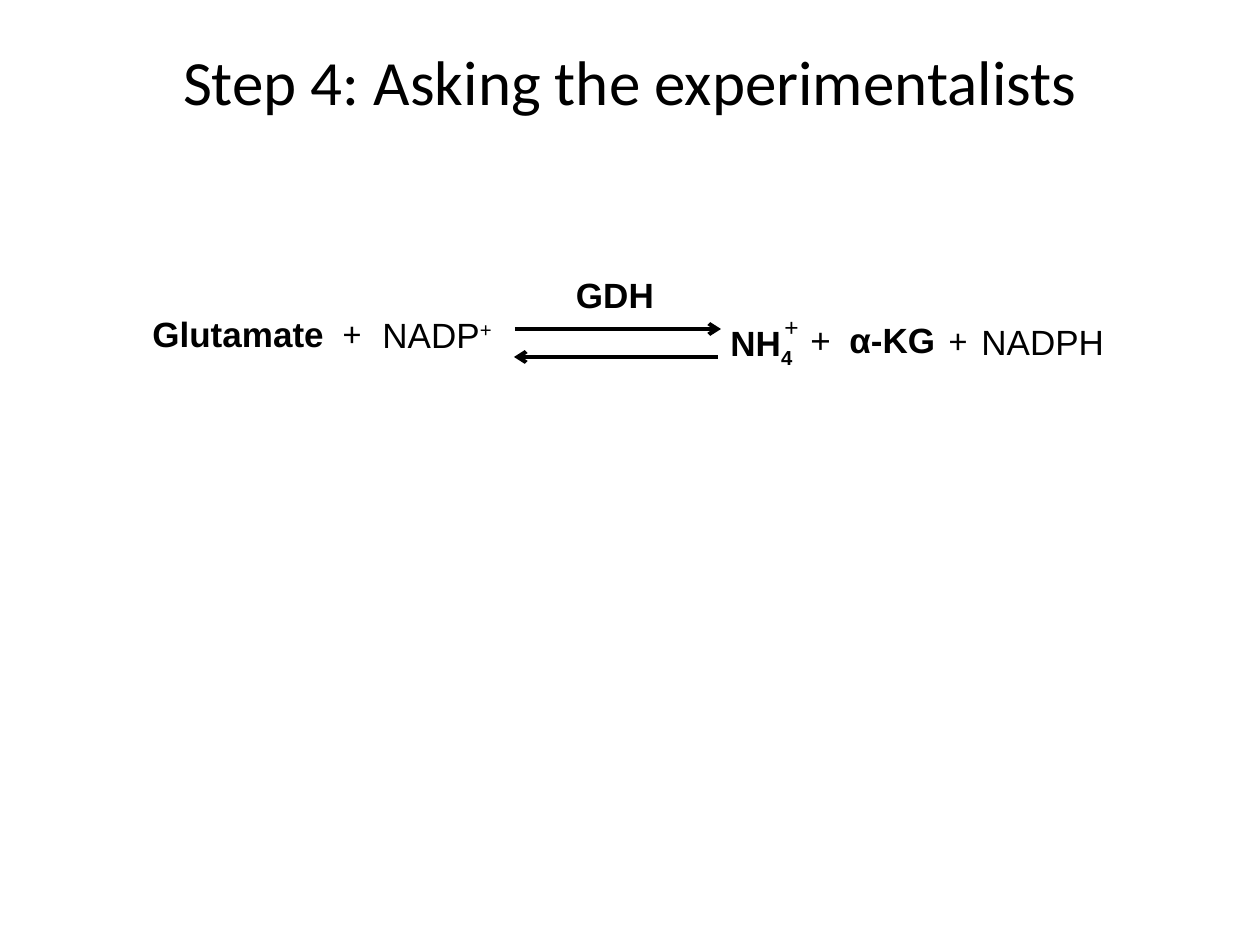
"""Build the slide showing the reversible GDH reaction."""
from lxml import etree
from pptx import Presentation
from pptx import util as u
from pptx.dml.color import RGBColor
from pptx.enum import shapes, text
from pptx.oxml.ns import qn

COLORS = {"ink": "000000", "paper": "FFFFFF"}
EMU_PER_PX = 914400 / 126


def px(n):
    return u.Emu(round(n * EMU_PER_PX))


class Deck:
    def __init__(self):
        self.prs = Presentation()
        self.prs.slide_width, self.prs.slide_height = px(1260), px(945)
        self.ink = RGBColor.from_string(COLORS["ink"])
        self.s = self.prs.slides.add_slide(self.prs.slide_layouts[5])
        fill = self.s.background.fill
        fill.solid()
        fill.fore_color.rgb = RGBColor.from_string(COLORS["paper"])

    def run(self, p, wording, baseline=0, **style):
        r = p.add_run()
        r.text = wording
        for name, value in {"name": "Arial", "size": u.Pt(20), "bold": False, **style}.items():
            setattr(r.font, name, value)
        r.font.color.rgb = self.ink
        if baseline:
            r._r.get_or_add_rPr().set("baseline", str(baseline * 1000))

    def title(self, wording, x, y, w, h):
        sp = self.s.shapes.title
        for name, value in {"left": x, "top": y, "width": w, "height": h}.items():
            setattr(sp, name, px(value))
        tf = sp.text_frame
        tf.vertical_anchor = text.MSO_ANCHOR.MIDDLE
        p = tf.paragraphs[0]
        p.alignment = text.PP_ALIGN.CENTER
        self.run(p, wording, name="Calibri", size=u.Pt(36))

    def label(self, wording, x, y, w, h=55, script="", baseline=0,
              wrap=False, align=text.PP_ALIGN.LEFT, **style):
        tf = self.s.shapes.add_textbox(px(x), px(y), px(w), px(h)).text_frame
        tf.word_wrap = wrap
        tf.auto_size = text.MSO_AUTO_SIZE.SHAPE_TO_FIT_TEXT
        p = tf.paragraphs[0]
        p.alignment = align
        self.run(p, wording, **style)
        if script:
            self.run(p, script, baseline, **style)

    def arrow(self, x1, x2, y):
        c = self.s.shapes.add_connector(shapes.MSO_CONNECTOR.STRAIGHT, px(x1), px(y), px(x2), px(y))
        c.line.width = u.Pt(2.25)
        c.line.color.rgb = self.ink
        etree.SubElement(c.line._get_or_add_ln(), qn("a:tailEnd"), type="arrow")
        etree.SubElement(c._element.spPr, qn("a:effectLst"))


def main():
    d = Deck()
    d.title("Step 4: Asking the experimentalists", 63, 1, 1134, 158)
    d.label("Glutamate", 140, 306, 233, wrap=True, bold=True)
    d.label("GDH", 538, 267, 154, wrap=True, align=text.PP_ALIGN.CENTER, bold=True)
    d.label("NH", 718, 315, 89, script="4", baseline=-25, bold=True)
    d.label("α-KG", 837, 312, 112, bold=True)
    d.label("+", 798, 312, 47)
    d.label("+", 772, 306, 40, 43, size=u.Pt(14))
    d.label("NADPH", 969, 314, 164, wrap=True)
    d.label("NADP", 370, 307, 139, script="+", baseline=30)
    for x, y in ((331, 305), (937, 312)):
        d.label("+", x, y, 43, name="Calibri")
    d.arrow(515, 721, 329)
    d.arrow(718, 514, 357)
    d.prs.save("out.pptx")


if __name__ == "__main__":
    main()
